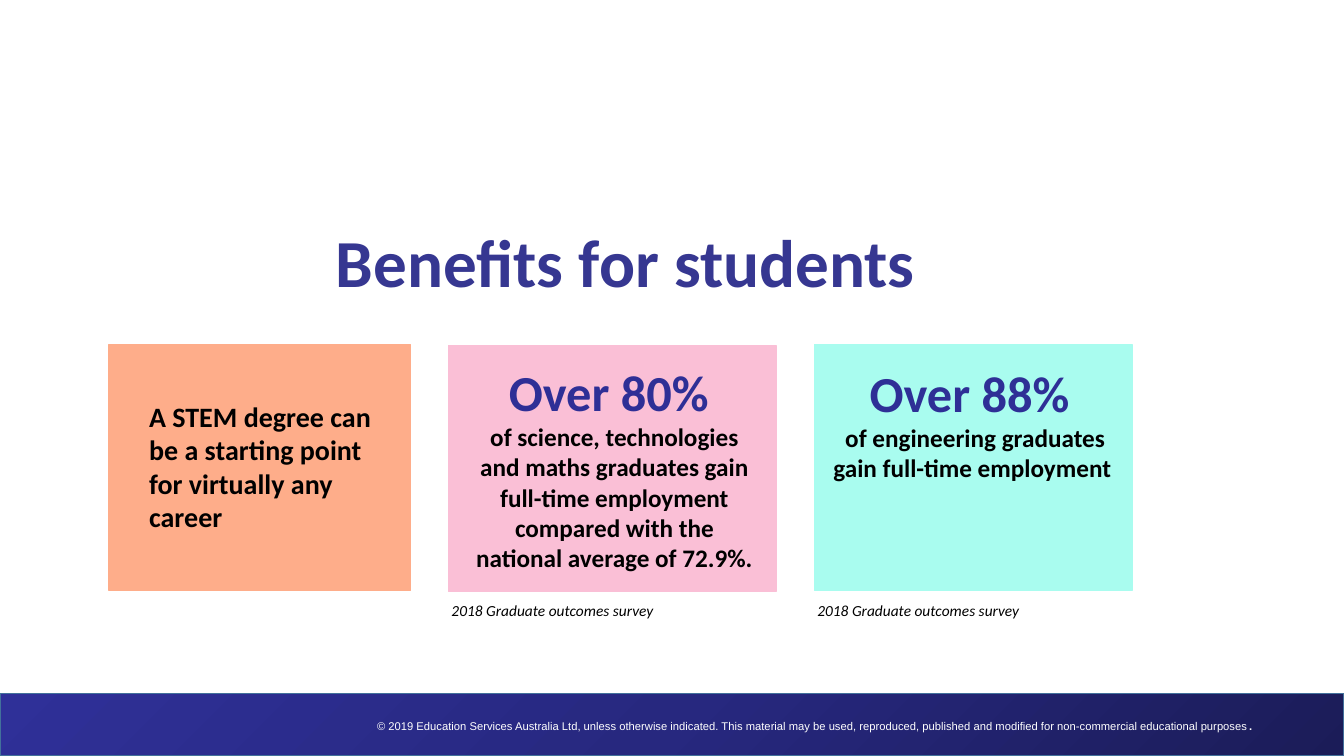
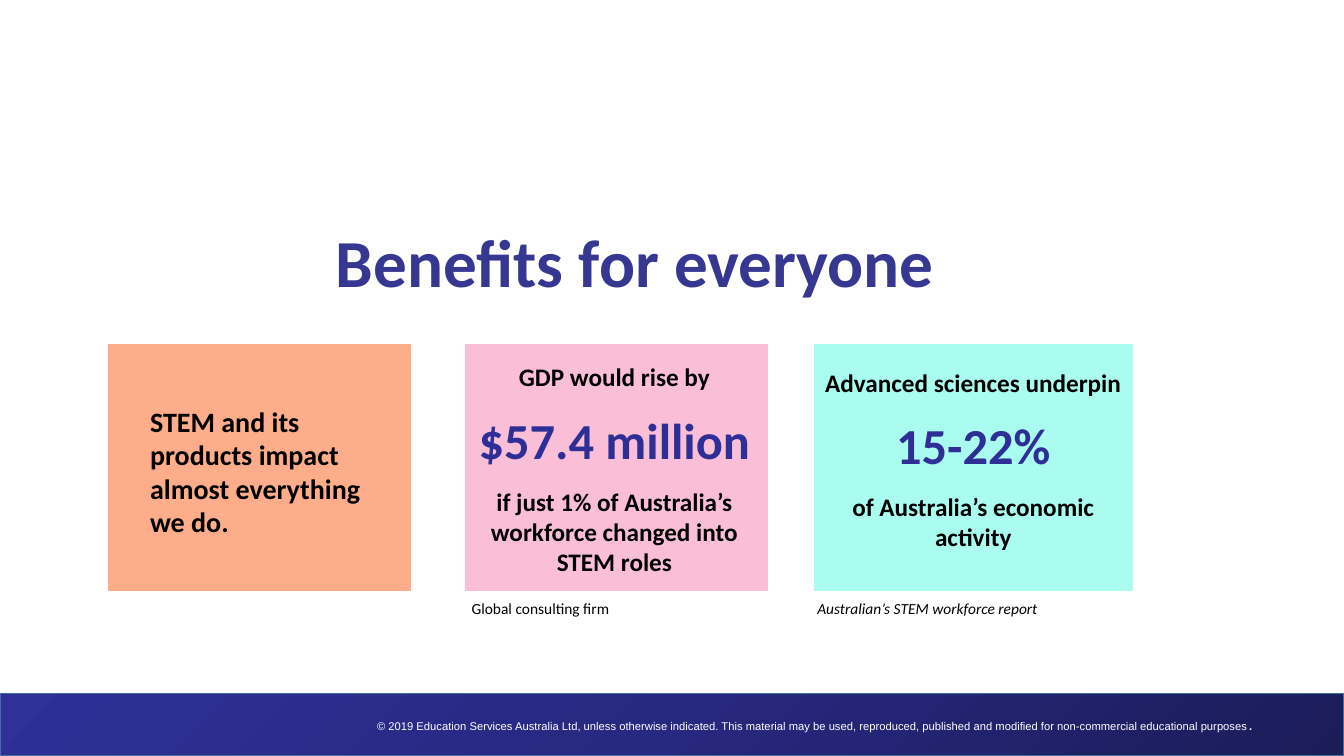
import copy
import pptx
import pptx.util
import pptx.dml.color
import pptx.enum.shapes
import pptx.enum.text
import pptx.oxml.ns

Pt = pptx.util.Pt
RGBColor = pptx.dml.color.RGBColor
PP_ALIGN = pptx.enum.text.PP_ALIGN
MIDDLE = pptx.enum.text.MSO_ANCHOR.MIDDLE
RECTANGLE = pptx.enum.shapes.MSO_SHAPE.RECTANGLE

TITLE_BLUE = RGBColor(0x36, 0x37, 0x91)
FIGURE_BLUE = RGBColor(0x2E, 0x2F, 0x96)
BLACK = RGBColor(0, 0, 0)
WHITE = RGBColor(0xFF, 0xFF, 0xFF)
BAND_LINE = RGBColor(0x42, 0x71, 0x9B)
BAND_STOPS = [RGBColor(0x2F, 0x30, 0x98), RGBColor(0x27, 0x28, 0x7F), RGBColor(0x1B, 0x1C, 0x58)]
PANEL_COLOURS = [RGBColor(0xFE, 0xAD, 0x8A), RGBColor(0xFA, 0xBF, 0xD6), RGBColor(0xA9, 0xFC, 0xEF)]

PANEL_HEIGHT = 175.7
FIGURE_SIZE = 36
BODY_SIZE = 18
STATEMENT_SIZE = 20
SOURCE_SIZE = 11
COPYRIGHT = (
    "© 2019 Education Services Australia Ltd, unless otherwise indicated. "
    "This material may be used, reproduced, published and modified for "
    "non-commercial educational purposes"
)


def add_rectangle(slide, box, line_colour):
    rectangle = slide.shapes.add_shape(RECTANGLE, *[Pt(length) for length in box])
    rectangle.shadow.inherit = False
    rectangle.line.color.rgb = line_colour
    rectangle.line.width = Pt(1)
    return rectangle


def add_text(slide, box, lines, size, align=PP_ALIGN.LEFT, bold=True, italic=False, gap=0):
    frame = slide.shapes.add_textbox(*[Pt(length) for length in box]).text_frame
    frame.word_wrap = True
    frame.text = "\n".join(lines)
    for index, paragraph in enumerate(frame.paragraphs):
        is_figure = any(mark in paragraph.text for mark in ("Over ", "$", "15-22%"))
        paragraph.alignment = align
        paragraph.space_before = Pt(gap if index == 2 else 0)
        paragraph.space_after = Pt(gap if index == 0 else 0)
        font = paragraph.runs[0].font
        font.name = "Calibri"
        font.size = Pt(FIGURE_SIZE if is_figure else size)
        font.bold = bold
        font.italic = italic
        font.color.rgb = FIGURE_BLUE if is_figure else BLACK


benefits = [
    {
        "title": "Benefits for students",
        "panels": [(77.8, 246.2, 215.3), (320.4, 247, 234), (581.8, 246.2, 226.8)],
        "statement": ((99.4, 281.5, 193, 104.4),
                      "A STEM degree can be a starting point for virtually any career"),
        "gap": 0,
        "facts": [
            ((329.8, 254.2, 218.2, 159.8),
             ["Over 80% ",
              "of science, technologies and maths graduates gain full-time employment "
              "compared with the national average of 72.9%."]),
            ((587.5, 254.9, 218.2, 94.3),
             ["Over 88% ", "of engineering graduates gain full-time employment "]),
        ],
        "source_top": 425.5,
        "sources": [(315.4, "2018 Graduate outcomes survey", True),
                    (576.7, "2018 Graduate outcomes survey", True)],
    },
    {
        "title": "Benefits for everyone",
        "panels": [(77.8, 246.2, 215.3), (332.6, 246.2, 215.3), (581.8, 246.2, 226.8)],
        "statement": ((100.1, 285.1, 193, 104.4),
                      "STEM and its products impact almost everything we do."),
        "gap": 12,
        "facts": [
            ((329.8, 254.9, 218.2, 162.7),
             ["GDP would rise by", "$57.4 million",
              "if just 1% of Australia’s workforce changed into STEM roles"]),
            ((581.8, 258.5, 226.8, 140.4),
             ["Advanced sciences underpin", "15-22%", "of Australia’s economic activity"]),
        ],
        "source_top": 424.1,
        "sources": [(329.8, "Global consulting firm", False),
                    (576.7, "Australian’s STEM workforce report", True)],
    },
]

presentation = pptx.Presentation()
presentation.slide_width = Pt(960)
presentation.slide_height = Pt(540)
title_only = presentation.slide_layouts[5]
slides = [presentation.slides.add_slide(title_only) for benefit in benefits]

band = add_rectangle(slides[0], (0, 495.4, 960, 44.6), BAND_LINE)
band.fill.gradient()
band.fill.gradient_angle = 315
stop_list = band.element.find(".//" + pptx.oxml.ns.qn("a:gsLst"))
stop_list.insert(1, copy.deepcopy(stop_list[0]))
for index, stop in enumerate(band.fill.gradient_stops):
    stop.position = index / 2
    stop.color.rgb = BAND_STOPS[index]

copyright_box = slides[0].shapes.add_textbox(Pt(265.7), Pt(510.5), Pt(690.5), Pt(15.8))
copyright_frame = copyright_box.text_frame
copyright_frame.word_wrap = True
copyright_frame.vertical_anchor = MIDDLE
copyright_frame.margin_left = copyright_frame.margin_right = Pt(3.6)
copyright_frame.text = COPYRIGHT
copyright_frame.paragraphs[0].add_run().text = "."
for run in copyright_frame.paragraphs[0].runs:
    run.font.name = "Arial"
    run.font.size = Pt(8)
    run.font.bold = run.text == "."
    run.font.color.rgb = WHITE

for footer_part in (band, copyright_box):
    title_only.shapes.element.append(footer_part.element)

for slide, benefit in zip(slides, benefits):
    title = slide.shapes.title
    title.left, title.top, title.width, title.height = Pt(236.2), Pt(173.5), Pt(635), Pt(32.4)
    title_frame = title.text_frame
    title_frame.text = benefit["title"]
    title_frame.auto_size = pptx.enum.text.MSO_AUTO_SIZE.NONE
    title_frame.vertical_anchor = MIDDLE
    title_frame.margin_left = title_frame.margin_right = Pt(3.6)
    heading = title_frame.paragraphs[0]
    heading.alignment = PP_ALIGN.LEFT
    heading.line_spacing = 0.9
    heading_font = heading.runs[0].font
    heading_font.name = "Calibri"
    heading_font.size = Pt(48)
    heading_font.bold = True
    heading_font.color.rgb = TITLE_BLUE

    for panel_box, colour in zip(benefit["panels"], PANEL_COLOURS):
        panel = add_rectangle(slide, (*panel_box, PANEL_HEIGHT), colour)
        panel.fill.solid()
        panel.fill.fore_color.rgb = colour

    statement_box, statement = benefit["statement"]
    add_text(slide, statement_box, [statement], STATEMENT_SIZE)
    for fact_box, lines in benefit["facts"]:
        add_text(slide, fact_box, lines, BODY_SIZE, PP_ALIGN.CENTER, gap=benefit["gap"])
    for left, source, italic in benefit["sources"]:
        source_box = (left, benefit["source_top"], 175.7, 20.9)
        add_text(slide, source_box, [source], SOURCE_SIZE, bold=False, italic=italic)

presentation.save("out.pptx")
